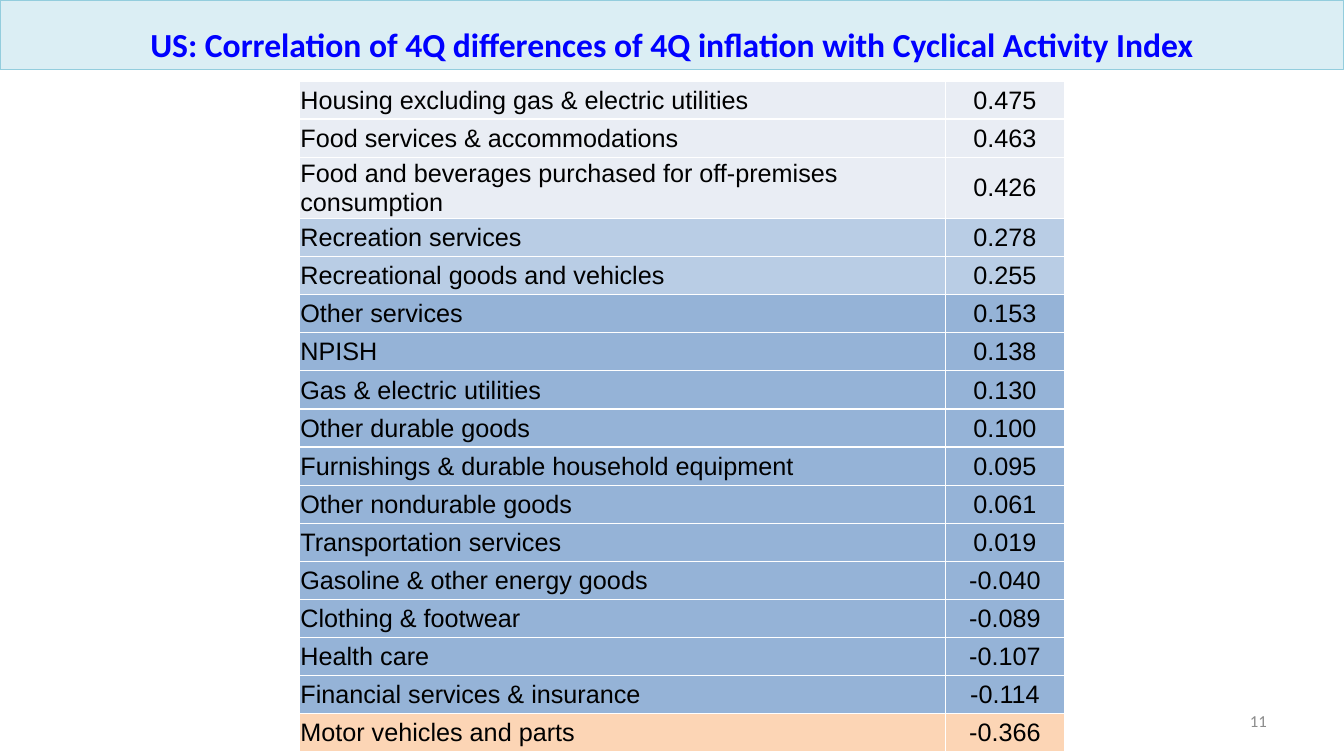
from lxml.etree import SubElement as Sub
from pptx import Presentation as Deck
from pptx.dml.color import RGBColor as Rgb
from pptx.enum.shapes import MSO_SHAPE as Form
from pptx.enum.text import MSO_ANCHOR as Anchor, PP_ALIGN as Align
from pptx.oxml.ns import qn
from pptx.util import Pt

HUES = {
    "band": "DBEEF4", "edge": "93CDDD", "title": "0000FF", "page": "8C8C8C",
    "text": "000000", "rule": "FFFFFF", "high": "E9EDF4", "mid": "B9CDE5",
    "low": "95B3D7", "last": "FCD5B5",
}

ROWS = [
    ("Housing excluding gas & electric utilities", "0.475", "high"),
    ("Food services & accommodations", "0.463", "high"),
    ("Food and beverages purchased for off-premises consumption", "0.426", "high"),
    ("Recreation services", "0.278", "mid"),
    ("Recreational goods and vehicles", "0.255", "mid"),
    ("Other services", "0.153", "low"),
    ("NPISH", "0.138", "low"),
    ("Gas & electric utilities", "0.130", "low"),
    ("Other durable goods", "0.100", "low"),
    ("Furnishings & durable household equipment", "0.095", "low"),
    ("Other nondurable goods", "0.061", "low"),
    ("Transportation services", "0.019", "low"),
    ("Gasoline & other energy goods", "-0.040", "low"),
    ("Clothing & footwear", "-0.089", "low"),
    ("Health care", "-0.107", "low"),
    ("Financial services & insurance", "-0.114", "low"),
    ("Motor vehicles and parts", "-0.366", "last"),
]


def tint(name):
    return Rgb.from_string(HUES[name])


def write(frame, text, size=18, font="Arial", hue="text", bold=False, align=Align.LEFT):
    para = frame.paragraphs[0]
    para.alignment = align
    run = para.add_run()
    run.text = text
    run.font.size = Pt(size)
    run.font.name = font
    run.font.bold = bold
    run.font.color.rgb = tint(hue)


class Board:
    def __init__(self, slide, font="Calibri"):
        self.slide = slide
        self.font = font

    def band(self, text, box):
        bar = self.slide.shapes.add_shape(Form.RECTANGLE, *map(Pt, box))
        bar.shadow.inherit = False
        bar.fill.solid()
        bar.fill.fore_color.rgb = tint("band")
        bar.line.color.rgb = tint("edge")
        bar.line.width = Pt(0)
        frame = bar.text_frame
        frame.word_wrap = True
        frame.vertical_anchor = Anchor.BOTTOM
        write(frame, text, size=24, font=self.font, hue="title", bold=True, align=Align.CENTER)

    def label(self, text, box):
        frame = self.slide.shapes.add_textbox(*map(Pt, box)).text_frame
        frame.word_wrap = True
        frame.vertical_anchor = Anchor.MIDDLE
        write(frame, text, size=12, font=self.font, hue="page", align=Align.RIGHT)

    def table(self, rows, left, top, wide, high):
        grid = self.slide.shapes.add_table(
            len(rows), len(wide), Pt(left), Pt(top), Pt(sum(wide)), Pt(high * len(rows))
        ).table
        grid.first_row = grid.horz_banding = False
        for col, width in zip(grid.columns, wide):
            col.width = Pt(width)
        for line, (name, value, hue) in zip(grid.rows, rows):
            line.height = Pt(high)
            for cell, text, align in zip(line.cells, (name, value), (Align.LEFT, Align.CENTER)):
                self.cell(cell, text, hue, align)

    def cell(self, cell, text, hue, align):
        cell.margin_left = cell.margin_right = cell.margin_top = Pt(0.6)
        cell.margin_bottom = Pt(0)
        cell.vertical_anchor = Anchor.MIDDLE
        write(cell.text_frame, text, align=align)
        props = cell._tc.get_or_add_tcPr()
        for side in ("L", "R", "T", "B"):
            edge = Sub(props, qn(f"a:ln{side}"), w=str(Pt(1)))
            Sub(Sub(edge, qn("a:solidFill")), qn("a:srgbClr"), val=HUES["rule"])
        cell.fill.solid()
        cell.fill.fore_color.rgb = tint(hue)


def main():
    deck = Deck()
    deck.slide_width, deck.slide_height = Pt(960), Pt(540)
    board = Board(deck.slides.add_slide(deck.slide_layouts[6]))
    board.label("11", (688, 500.5, 224, 28.75))
    board.band(
        "US: Correlation of 4Q differences of 4Q inflation with Cyclical Activity Index",
        (0, 0, 960, 49.7),
    )
    board.table(ROWS, 214, 57.8, (461.5, 84.7), 27.23)
    deck.save("out.pptx")


if __name__ == "__main__":
    main()
